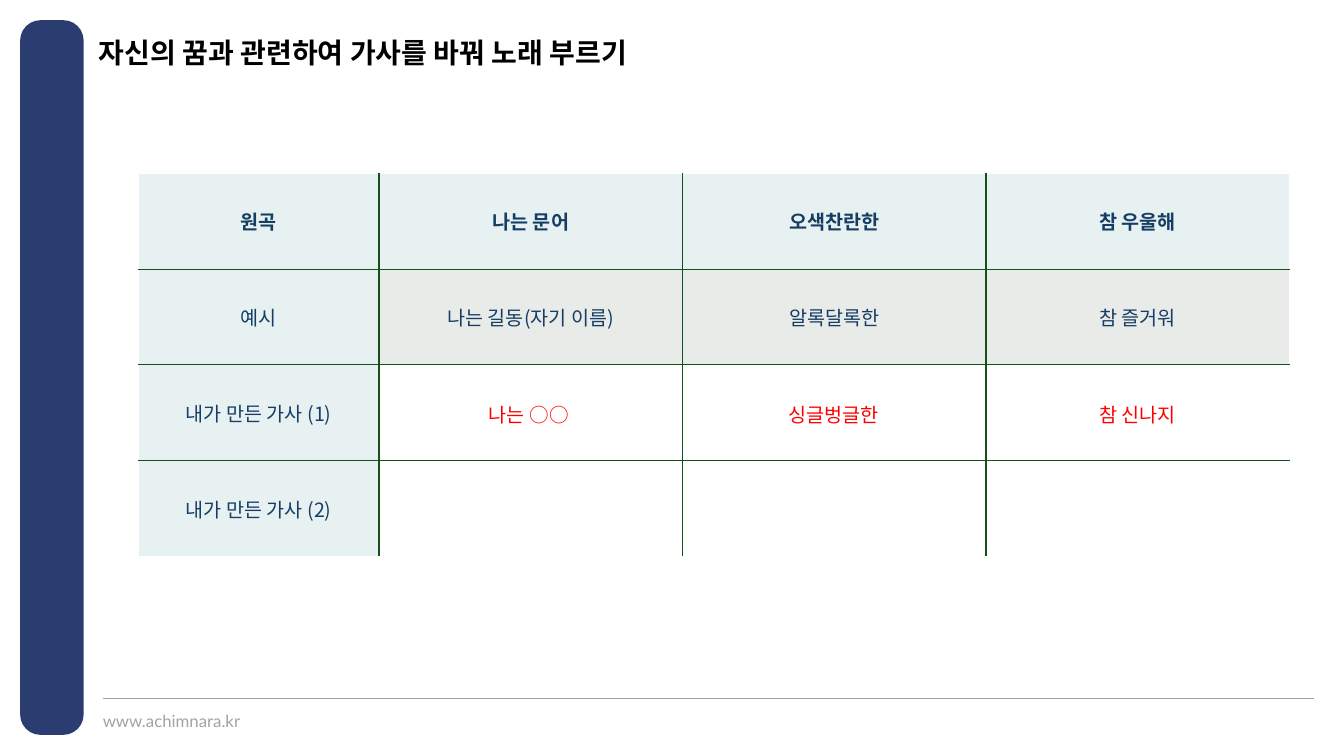
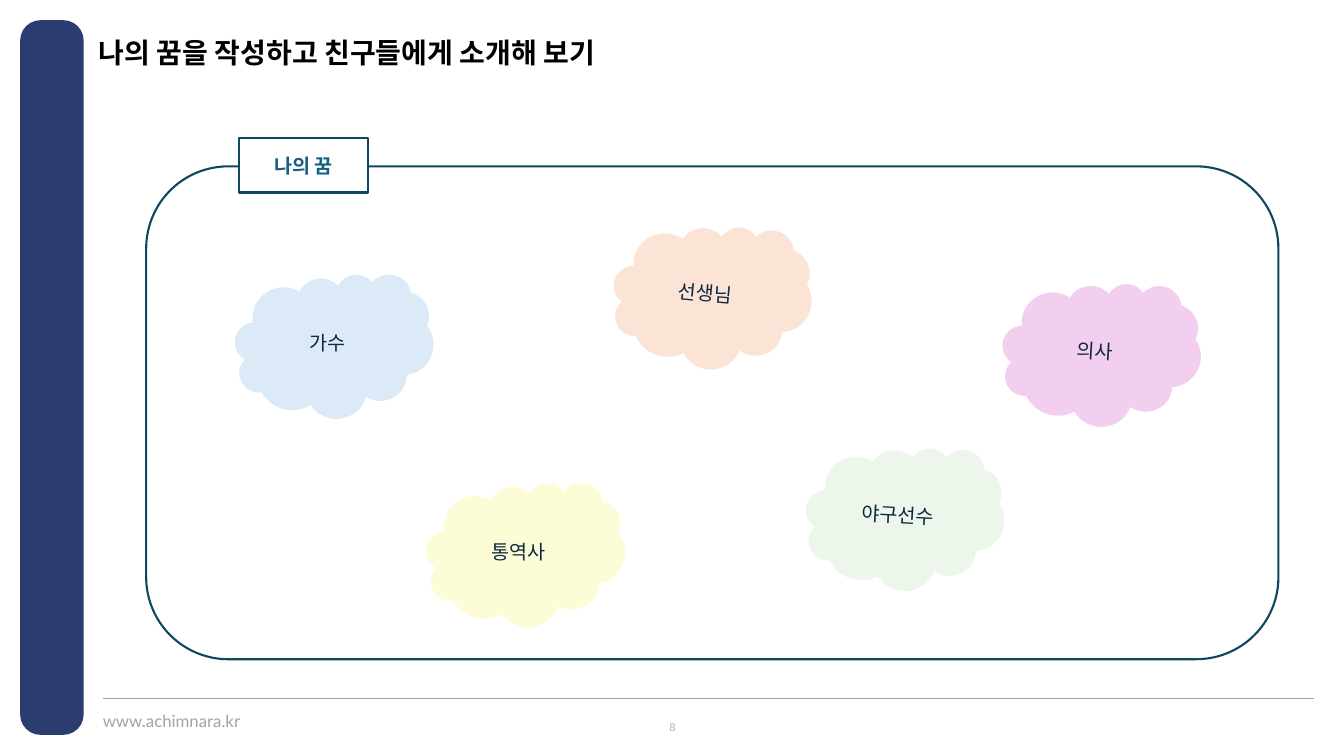
from lxml import etree
from pptx import Presentation
from pptx.dml.color import RGBColor
from pptx.enum.shapes import MSO_CONNECTOR, MSO_SHAPE
from pptx.enum.text import MSO_ANCHOR, MSO_AUTO_SIZE, PP_ALIGN
from pptx.oxml import parse_xml
from pptx.oxml.ns import nsdecls, qn
from pptx.util import Inches, Pt

NAVY = RGBColor(0x2B, 0x3C, 0x71)
GRAY = RGBColor(0x9E, 0xA4, 0xAA)
PAGE_GRAY = RGBColor(0xAE, 0xAE, 0xAE)
BLACK = RGBColor(0, 0, 0)
WHITE = RGBColor(0xFF, 0xFF, 0xFF)
RED = RGBColor(0xFF, 0, 0)
GREEN = RGBColor(0x13, 0x50, 0x1B)
TABLE_TEXT = RGBColor(0x16, 0x3E, 0x64)
HEADER_FILL = RGBColor(0xE7, 0xF1, 0xF1)
EXAMPLE_FILL = RGBColor(0xE8, 0xEB, 0xE8)
TEAL = RGBColor(0x10, 0x47, 0x60)
LABEL_TEXT = RGBColor(0x15, 0x60, 0x82)
DARK = RGBColor(0x0E, 0x28, 0x41)
KOREAN = "Noto Sans CJK KR"


def write(tf, text, size, color, bold=False, font="Arial",
          align=PP_ALIGN.CENTER, anchor=MSO_ANCHOR.MIDDLE, inset=None):
    """Write one formatted run into the first paragraph of a text frame."""
    tf.word_wrap = True
    tf.vertical_anchor = anchor
    if inset is not None:
        tf.margin_left = tf.margin_right = tf.margin_top = tf.margin_bottom = inset
    p = tf.paragraphs[0]
    p.alignment = align
    r = p.add_run()
    r.text = text
    r.font.size, r.font.bold, r.font.name = Pt(size), bold, font
    r.font.color.rgb = color
    etree.SubElement(r._r.get_or_add_rPr(), qn("a:ea"), typeface=KOREAN)


def add_box(s, kind, x, y, w, h, fill, line=None):
    sp = s.shapes.add_shape(kind, Inches(x), Inches(y), Inches(w), Inches(h))
    sp.shadow.inherit = False
    sp.fill.solid()
    sp.fill.fore_color.rgb = fill
    if line is None:
        sp.line.fill.background()
    else:
        sp.line.color.rgb = line
        sp.line.width = Pt(1.5)
    return sp


prs = Presentation()
prs.slide_width, prs.slide_height = Inches(13.33), Inches(7.5)

# Shared frame: side band, footer rule, web address, title
slides = []
for title in ("자신의 꿈과 관련하여 가사를 바꿔 노래 부르기",
              "나의 꿈을 작성하고 친구들에게 소개해 보기"):
    s = prs.slides.add_slide(prs.slide_layouts[5])
    slides.append(s)
    band = add_box(s, MSO_SHAPE.ROUNDED_RECTANGLE, 0.2, 0.2, 0.63, 7.09, NAVY)
    band.adjustments[0] = 0.32
    rule = s.shapes.add_connector(MSO_CONNECTOR.STRAIGHT, Inches(1.02), Inches(6.93),
                                  Inches(13.03), Inches(6.93))
    rule.line.color.rgb = GRAY
    rule.line.width = Pt(0.5)
    etree.SubElement(rule._element.spPr, qn("a:effectLst"))
    address = s.shapes.add_textbox(Inches(1.02), Inches(7.05), Inches(1.5), Inches(0.2))
    write(address.text_frame, "www.achimnara.kr", 12, GRAY, font="Lato",
          align=PP_ALIGN.LEFT, anchor=MSO_ANCHOR.TOP, inset=0)
    ph = s.shapes.title
    ph.left, ph.top, ph.width, ph.height = Inches(0.98), Inches(0.39), Inches(7.87), Inches(0.28)
    tf = ph.text_frame
    tf.auto_size = MSO_AUTO_SIZE.NONE
    write(tf, title, 20, BLACK, bold=True, align=PP_ALIGN.LEFT,
          anchor=MSO_ANCHOR.TOP, inset=0)
    tf.paragraphs[0].line_spacing = 0.9

lyrics, dreams = slides

# Slide 1: lyrics table
ROWS = [
    ["원곡", "나는 문어", "오색찬란한", "참 우울해"],
    ["예시", "나는 길동(자기 이름)", "알록달록한", "참 즐거워"],
    ["내가 만든 가사 (1)", "", "", ""],
    ["내가 만든 가사 (2)", "", "", ""],
]
COL_WIDTHS = [2.39, 3.01, 3.01, 3.01]
frame = lyrics.shapes.add_table(len(ROWS), len(COL_WIDTHS), Inches(1.37), Inches(1.72),
                                Inches(sum(COL_WIDTHS)), Inches(3.79))
table = frame.table
table.first_row = table.horz_banding = False
for col, width in zip(table.columns, COL_WIDTHS):
    col.width = Inches(width)
last_row, last_col = len(ROWS) - 1, len(COL_WIDTHS) - 1
for i, row in enumerate(ROWS):
    table.rows[i].height = Inches(0.95)
    for j, text in enumerate(row):
        cell = table.cell(i, j)
        cell.fill.solid()
        if i == 0 or j == 0:
            cell.fill.fore_color.rgb = HEADER_FILL
        else:
            cell.fill.fore_color.rgb = EXAMPLE_FILL if i == 1 else WHITE
        if text:
            write(cell.text_frame, text, 14, TABLE_TEXT, bold=i == 0, font=KOREAN)
            cell.vertical_anchor = MSO_ANCHOR.MIDDLE
        # White on the outside of the table, green between cells
        outer = {"lnL": j == 0, "lnR": j == last_col, "lnT": i == 0, "lnB": i == last_row}
        for k, (side, is_outer) in enumerate(outer.items()):
            color = WHITE if is_outer else GREEN
            cell._tc.get_or_add_tcPr().insert(k, parse_xml(
                f'<a:{side} {nsdecls("a")} w="12700"><a:solidFill>'
                f'<a:srgbClr val="{color}"/></a:solidFill></a:{side}>'))

for k, answer in enumerate(["나는 ○○", "싱글벙글한", "참 신나지"]):
    tb = lyrics.shapes.add_textbox(Inches(3.84 + 3.02 * k), Inches(3.95),
                                   Inches(2.81), Inches(0.34))
    write(tb.text_frame, answer, 14, RED, anchor=MSO_ANCHOR.TOP)
    tb.text_frame.auto_size = MSO_AUTO_SIZE.SHAPE_TO_FIT_TEXT

# Slide 2: dream clouds
page = dreams.shapes.add_textbox(Inches(5.17), Inches(7.13), Inches(3), Inches(0.17))
write(page.text_frame, "8", 8, PAGE_GRAY)
add_box(dreams, MSO_SHAPE.ROUNDED_RECTANGLE, 1.45, 1.65, 11.23, 4.89, WHITE, TEAL)
label = add_box(dreams, MSO_SHAPE.RECTANGLE, 2.37, 1.37, 1.28, 0.54, WHITE, TEAL)
write(label.text_frame, "나의 꿈", 14, LABEL_TEXT, bold=True)

CLOUDS = [
    ("가수", 2.33, 2.72, 0, RGBColor(0xDC, 0xEA, 0xF7)),
    ("선생님", 6.08, 2.23, 5.3, RGBColor(0xFB, 0xE3, 0xD6)),
    ("통역사", 4.23, 4.79, 0, RGBColor(0xFC, 0xFC, 0xD6)),
    ("야구선수", 7.99, 4.43, 3.2, RGBColor(0xED, 0xF6, 0xEA)),
    ("의사", 9.94, 2.8, 3.4, RGBColor(0xF2, 0xCF, 0xEE)),
]
for job, x, y, angle, fill in CLOUDS:
    cloud = add_box(dreams, MSO_SHAPE.CLOUD, x, y, 1.97, 1.43, fill)
    cloud.rotation = angle
    write(cloud.text_frame, job, 14, DARK)

prs.save("out.pptx")
